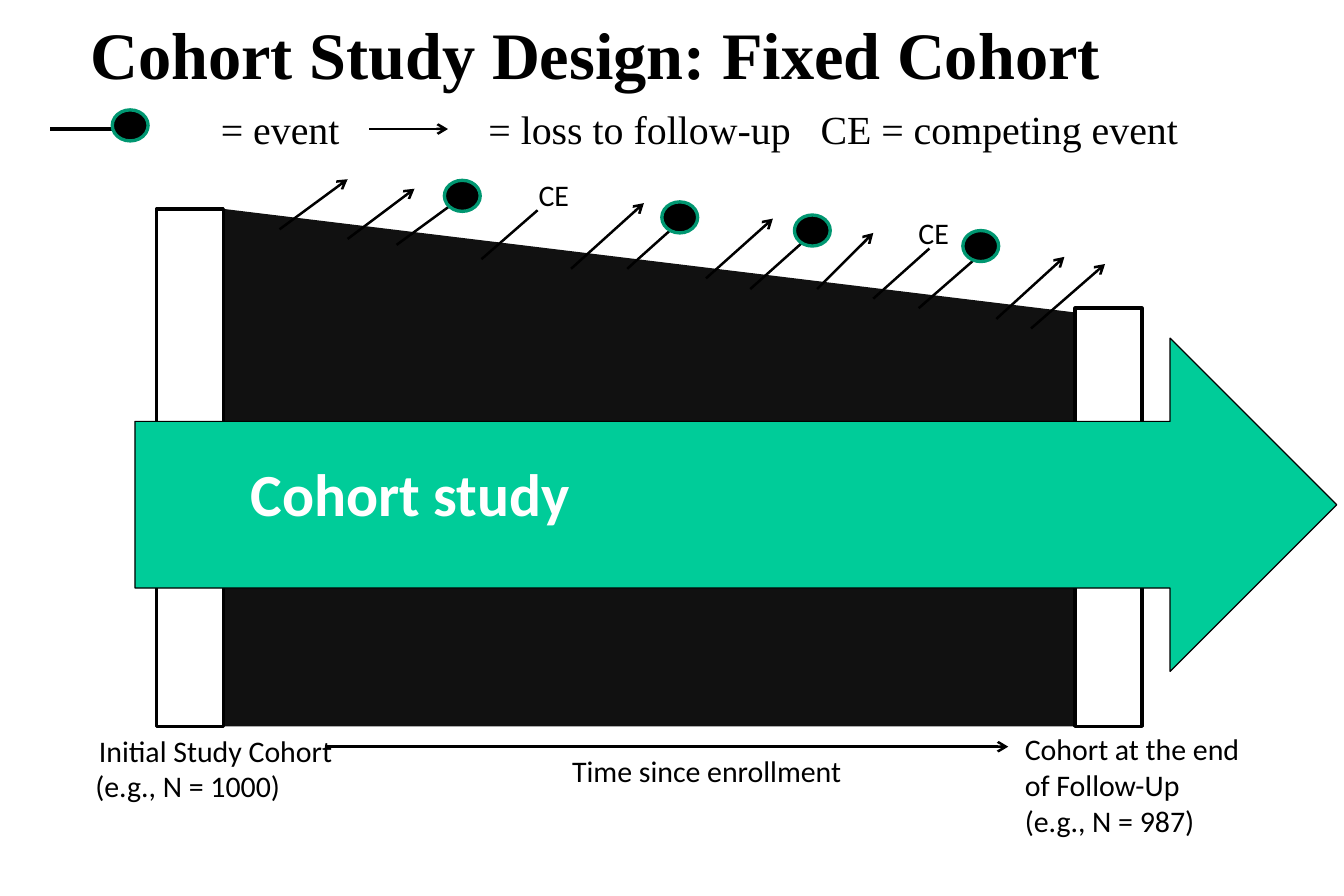
from dataclasses import dataclass

from pptx import Presentation
from pptx import util as u
from pptx.dml import color
from pptx.enum import shapes, text
from pptx.oxml import ns
from lxml import etree

SANS = "Calibri"
SERIF = "Times New Roman"
BLACK, WHITE, GREEN, RIM, DARK = "000000", "FFFFFF", "00CC99", "009771", "111111"
DOT_WIDTH, DOT_HEIGHT = 0.3, 0.26


@dataclass
class Stroke:
    start: tuple[float, float]
    end: tuple[float, float]
    arrow: bool = False
    width: float = 1.5


@dataclass
class Block:
    kind: shapes.MSO_SHAPE
    frame: tuple[float, float, float, float]
    fill: str | None = None
    line: str | None = BLACK
    width: float = 2
    mirrored: bool = False


@dataclass
class Label:
    frame: tuple[float, float, float, float]
    lines: list[str]
    size: float = 18
    font: str = SANS
    ink: str = BLACK
    bold: bool = False
    wrap: bool = False
    middle: bool = False
    centred_first: bool = False
    tabs: tuple[float, ...] = ()


def rgb(value: str) -> color.RGBColor:
    return color.RGBColor.from_string(value)


def draw_stroke(page, stroke: Stroke) -> None:
    ends = [u.Inches(value) for value in (*stroke.start, *stroke.end)]
    connector = page.shapes.add_connector(shapes.MSO_CONNECTOR.STRAIGHT, *ends)
    connector.line.width = u.Pt(stroke.width)
    connector.line.color.rgb = rgb(BLACK)
    if stroke.arrow:
        outline = connector.line._get_or_add_ln()
        etree.SubElement(outline, ns.qn("a:tailEnd"), type="arrow")
    etree.SubElement(connector._element.spPr, ns.qn("a:effectLst"))


def draw_block(page, block: Block) -> None:
    shape = page.shapes.add_shape(block.kind, *map(u.Inches, block.frame))
    shape.shadow.inherit = False
    if block.fill:
        shape.fill.solid()
        shape.fill.fore_color.rgb = rgb(block.fill)
    else:
        shape.fill.background()
    if block.line:
        shape.line.color.rgb = rgb(block.line)
        shape.line.width = u.Pt(block.width)
    else:
        shape.line.fill.background()
    if block.mirrored:
        shape._element.spPr.xfrm.set("flipH", "1")


def draw_label(page, label: Label) -> None:
    box = page.shapes.add_textbox(*map(u.Inches, label.frame))
    frame = box.text_frame
    frame.word_wrap = label.wrap
    frame.auto_size = text.MSO_AUTO_SIZE.SHAPE_TO_FIT_TEXT
    if label.middle:
        frame.vertical_anchor = text.MSO_ANCHOR.MIDDLE
    font_format = {"name": label.font, "size": u.Pt(label.size), "bold": label.bold}
    for index, line in enumerate(label.lines):
        para = frame.add_paragraph() if index else frame.paragraphs[0]
        centred = label.centred_first and index == 0
        para.alignment = text.PP_ALIGN.CENTER if centred else text.PP_ALIGN.LEFT
        if label.tabs:
            stops = etree.SubElement(para._p.get_or_add_pPr(), ns.qn("a:tabLst"))
            for stop in label.tabs:
                etree.SubElement(stops, ns.qn("a:tab"), pos=str(u.Inches(stop)), algn="l")
        span = para.add_run()
        span.text = line
        for name, value in font_format.items():
            setattr(span.font, name, value)
        span.font.color.rgb = rgb(label.ink)


COHORT_BLOCKS = [
    Block(shapes.MSO_SHAPE.FLOWCHART_MANUAL_INPUT, (1.88, 1.75, 7.12, 4.33),
          DARK, None, mirrored=True),
    Block(shapes.MSO_SHAPE.RECTANGLE, (9, 2.58, 0.56, 3.5)),
    Block(shapes.MSO_SHAPE.RECTANGLE, (1.31, 1.75, 0.56, 4.33)),
]

LOSSES = [
    ((2.34, 1.92), (2.91, 1.5)),
    ((2.91, 2), (3.47, 1.58)),
    ((4.78, 2.25), (5.39, 1.7)),
    ((5.91, 2.33), (6.47, 1.83)),
    ((6.84, 2.42), (7.31, 1.95)),
    ((8.34, 2.67), (8.91, 2.15)),
    ((8.63, 2.75), (9.25, 2.21)),
]
EVENTS = [
    ((3.32, 2.05), (3.84, 1.67)),
    ((5.25, 2.25), (5.72, 1.83)),
    ((6.28, 2.42), (6.75, 2)),
    ((7.69, 2.58), (8.16, 2.17)),
]
COMPETING_EVENTS = [
    ((4.03, 2.17), (4.5, 1.76)),
    ((7.31, 2.5), (7.78, 2.08)),
]
TIME_AXIS = ((2.72, 6.25), (8.44, 6.25))
LOSS_KEY = ((3.09, 1.08), (3.75, 1.08))
EVENT_KEY = ((0.42, 1.08), (0.98, 1.08))

STROKES = [
    *(Stroke(*ends, arrow=True) for ends in [*LOSSES, TIME_AXIS, LOSS_KEY]),
    *(Stroke(*ends) for ends in EVENTS + COMPETING_EVENTS),
    Stroke(*EVENT_KEY, width=2),
]

EVENT_DOTS = [(0.94, 0.92), (3.72, 1.51), (5.54, 1.69), (6.65, 1.8), (8.06, 1.93)]
DOTS = [
    Block(shapes.MSO_SHAPE.OVAL, (left, top, DOT_WIDTH, DOT_HEIGHT), BLACK, RIM)
    for left, top in EVENT_DOTS
]

KEY_TEXTS = ["", "= event", "= loss to follow-up", "CE = competing event"]
LABELS = [
    Label((0.66, 0.06, 8.74, 0.77), ["Cohort Study Design: Fixed Cohort"],
          40, SERIF, bold=True),
    Label((0.38, 0.83, 10.38, 0.5), ["\t".join(KEY_TEXTS)], 24, SERIF,
          wrap=True, middle=True, tabs=(1.37, 3.61, 6.39)),
    *(Label((left, top, 0.46, 0.4), ["CE"]) for left, top in [(4.41, 1.43), (7.59, 1.75)]),
    Label((4.69, 6.25, 2.48, 0.4), ["Time since enrollment"]),
    Label((0.7, 6.08, 2.21, 0.71), ["Initial Study Cohort", "(e.g., N = 1000)"],
          wrap=True, centred_first=True),
    Label((8.48, 6.07, 2.02, 1.01),
          ["Cohort at the end", "of Follow-Up", "(e.g., N = 987)"]),
]

STUDY_ARROW = Block(shapes.MSO_SHAPE.RIGHT_ARROW, (1.13, 2.83, 10.06, 2.79),
                    GREEN, width=0.75)
STUDY_LABEL = Label((2, 3.77, 2.9, 0.71), ["Cohort study"], 36, ink=WHITE, bold=True)


def main() -> None:
    deck = Presentation()
    deck.slide_width, deck.slide_height = u.Inches(11.25), u.Inches(7.5)
    page = deck.slides.add_slide(deck.slide_layouts[6])
    for block in COHORT_BLOCKS:
        draw_block(page, block)
    for stroke in STROKES:
        draw_stroke(page, stroke)
    for dot in DOTS:
        draw_block(page, dot)
    for label in LABELS:
        draw_label(page, label)
    draw_block(page, STUDY_ARROW)
    draw_label(page, STUDY_LABEL)
    deck.save("out.pptx")


if __name__ == "__main__":
    main()
